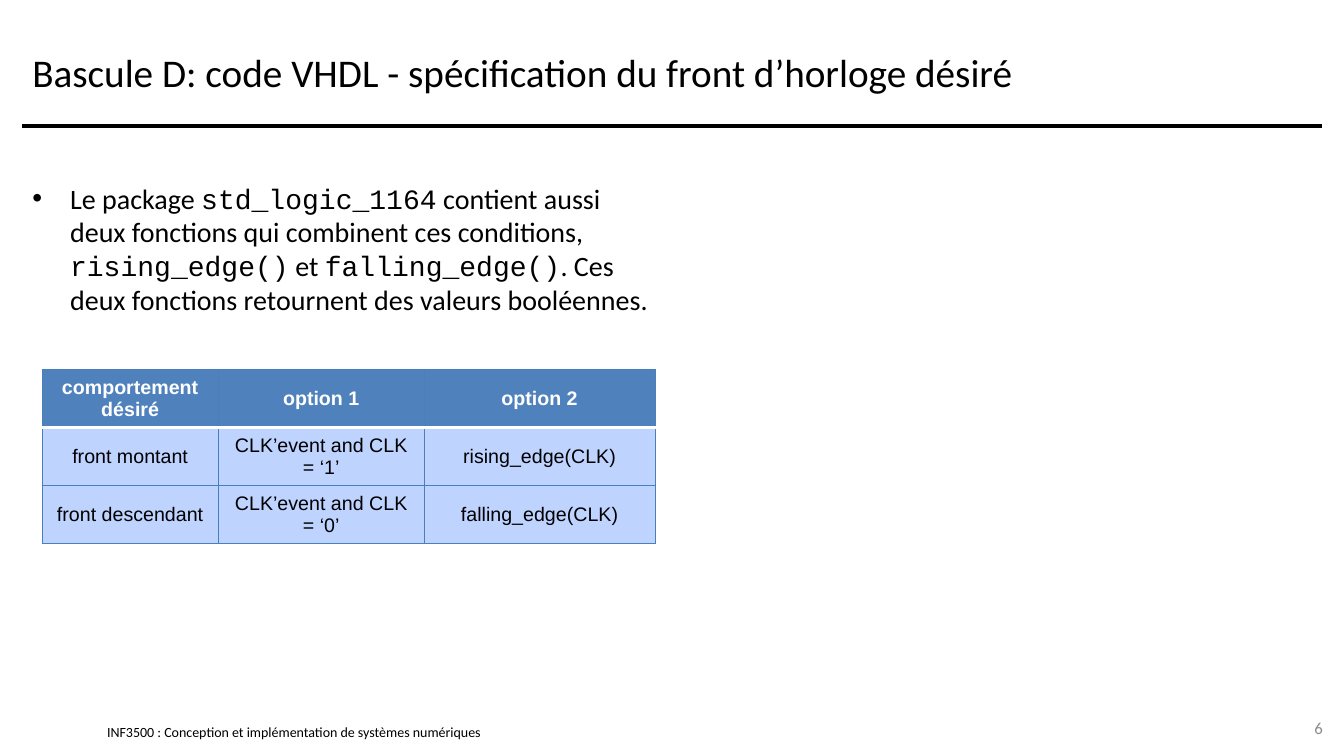
from dataclasses import dataclass

from lxml import etree
from pptx import Presentation
from pptx.dml.color import RGBColor
from pptx.enum.shapes import MSO_CONNECTOR
from pptx.enum.text import MSO_ANCHOR, PP_ALIGN
from pptx.oxml.ns import qn
from pptx.util import Pt

STRAIGHT = MSO_CONNECTOR.STRAIGHT
TOP, MIDDLE = MSO_ANCHOR.TOP, MSO_ANCHOR.MIDDLE
LEFT, CENTER, RIGHT = PP_ALIGN.LEFT, PP_ALIGN.CENTER, PP_ALIGN.RIGHT


@dataclass(frozen=True)
class Theme:
    text_font: str = "Calibri"
    code_font: str = "Courier New"
    table_font: str = "Arial"
    black: str = "000000"
    white: str = "FFFFFF"
    grey: str = "8C8C8C"
    header_fill: str = "4F81BD"
    body_fill: str = "BFD3FF"
    border: str = "4B7EBC"
    title_size: float = 28
    body_size: float = 20
    table_size: float = 14
    number_size: float = 12
    footer_size: float = 10


THEME = Theme()

TITLE = "Bascule D: code VHDL - spécification du front d’horloge désiré"
FOOTER = "INF3500 : Conception et implémentation de systèmes numériques"
SLIDE_NUMBER = "6"
BODY = [
    ("Le package ", THEME.text_font),
    ("std_logic_1164", THEME.code_font),
    (" contient aussi deux fonctions qui combinent ces conditions, ", THEME.text_font),
    ("rising_edge()", THEME.code_font),
    (" et ", THEME.text_font),
    ("falling_edge()", THEME.code_font),
    (". Ces deux fonctions retournent des valeurs booléennes.", THEME.text_font),
]
EDGE_TABLE = [
    ("comportement désiré", "option 1", "option 2"),
    ("front montant", "CLK’event and CLK = ‘1’", "rising_edge(CLK)"),
    ("front descendant", "CLK’event and CLK = ‘0’", "falling_edge(CLK)"),
]

SLIDE_SIZE = (960, 540)
MARGIN = 16
CONTENT_WIDTH = SLIDE_SIZE[0] - 2 * MARGIN
RULE_TOP = 90
TITLE_BOX = (MARGIN, 12, CONTENT_WIDTH, RULE_TOP - 12)
BODY_BOX = (MARGIN, 126, 456, 366)
FOOTER_BOX = (76.5, 516.5, 368, 12)
NUMBER_BOX = (904, 505.5, 48, 28.8)
BULLET_INDENT = 27
TABLE_ORIGIN = (30, 264)
COLUMN_WIDTHS = (126, 147, 165)
ROW_HEIGHT = 41.5


def add_run(paragraph, text, font_name, size, color, bold=False):
    run = paragraph.add_run()
    run.text = text
    run.font.name = font_name
    run.font.size = Pt(size)
    run.font.bold = bold
    run.font.color.rgb = RGBColor.from_string(color)


def add_text(slide, box, runs, size, color, anchor=MIDDLE, align=LEFT, insets=(7.2, 3.6)):
    """Add a text box of one paragraph and return that paragraph."""
    frame = slide.shapes.add_textbox(*map(Pt, box)).text_frame
    frame.word_wrap = True
    frame.vertical_anchor = anchor
    frame.margin_left = frame.margin_right = Pt(insets[0])
    frame.margin_top = frame.margin_bottom = Pt(insets[1])
    paragraph = frame.paragraphs[0]
    paragraph.alignment = align
    for text, font_name in runs:
        add_run(paragraph, text, font_name, size, color)
    return paragraph


def add_bullet(paragraph):
    properties = paragraph._p.get_or_add_pPr()
    properties.set("marL", str(Pt(BULLET_INDENT)))
    properties.set("indent", str(-Pt(BULLET_INDENT)))
    etree.SubElement(properties, qn("a:buFont"), typeface="Arial")
    etree.SubElement(properties, qn("a:buChar"), char="•")


def add_title_rule(slide):
    rule = slide.shapes.add_connector(
        STRAIGHT, Pt(MARGIN), Pt(RULE_TOP), Pt(MARGIN + CONTENT_WIDTH), Pt(RULE_TOP))
    rule.line.color.rgb = RGBColor.from_string(THEME.black)
    rule.line.width = Pt(3)
    etree.SubElement(rule._element.spPr, qn("a:effectLst"))


def set_border(cell, side, color, width):
    line = etree.SubElement(cell._tc.get_or_add_tcPr(), qn(f"a:ln{side}"), w=str(Pt(width)))
    fill = etree.SubElement(line, qn("a:solidFill"))
    etree.SubElement(fill, qn("a:srgbClr"), val=color)


def style_cell(cell, row, text):
    is_header = row == 0
    under_header = {0: "B", 1: "T"}.get(row)
    for side in "LRTB":
        if side == under_header:
            set_border(cell, side, THEME.white, 2)
        else:
            set_border(cell, side, THEME.border, 0.75)
    cell.fill.solid()
    cell.fill.fore_color.rgb = RGBColor.from_string(
        THEME.header_fill if is_header else THEME.body_fill)
    cell.vertical_anchor = MIDDLE
    cell.margin_left = cell.margin_right = Pt(7.2)
    cell.margin_top = cell.margin_bottom = 0
    paragraph = cell.text_frame.paragraphs[0]
    paragraph.alignment = CENTER
    add_run(paragraph, text, THEME.table_font, THEME.table_size,
            THEME.white if is_header else THEME.black, is_header)


def add_edge_table(slide):
    size = (sum(COLUMN_WIDTHS), ROW_HEIGHT * len(EDGE_TABLE))
    table = slide.shapes.add_table(
        len(EDGE_TABLE), len(COLUMN_WIDTHS), *map(Pt, TABLE_ORIGIN + size)).table
    table.horz_banding = False
    for column, width in zip(table.columns, COLUMN_WIDTHS):
        column.width = Pt(width)
    for row, texts in enumerate(EDGE_TABLE):
        table.rows[row].height = Pt(ROW_HEIGHT)
        for column, text in enumerate(texts):
            style_cell(table.cell(row, column), row, text)


def main():
    presentation = Presentation()
    presentation.slide_width, presentation.slide_height = map(Pt, SLIDE_SIZE)
    slide = presentation.slides.add_slide(presentation.slide_layouts[6])

    add_text(slide, FOOTER_BOX, [(FOOTER, THEME.text_font)],
             THEME.footer_size, THEME.black, insets=(0, 0))
    add_title_rule(slide)
    add_text(slide, TITLE_BOX, [(TITLE, THEME.text_font)], THEME.title_size, THEME.black)
    add_bullet(add_text(slide, BODY_BOX, BODY, THEME.body_size, THEME.black, anchor=TOP))
    add_text(slide, NUMBER_BOX, [(SLIDE_NUMBER, THEME.text_font)],
             THEME.number_size, THEME.grey, align=RIGHT)
    add_edge_table(slide)

    presentation.save("out.pptx")


if __name__ == "__main__":
    main()
